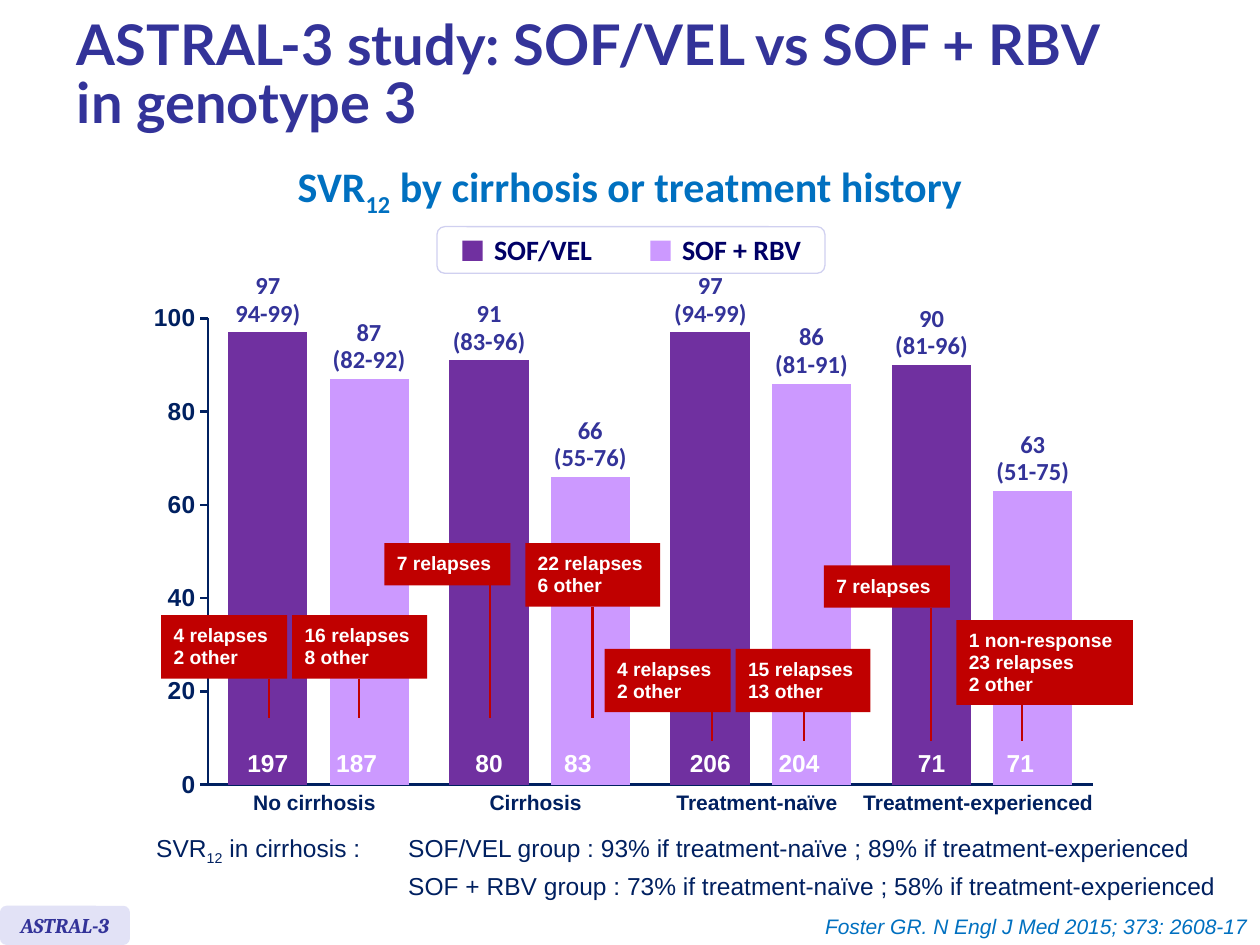
from lxml.etree import SubElement
from pptx import Presentation
from pptx.chart.data import CategoryChartData
from pptx.dml.color import RGBColor
from pptx.enum.chart import XL_CHART_TYPE as ChartType, XL_TICK_LABEL_POSITION as TickLabels
from pptx.enum.chart import XL_TICK_MARK as TickMark
from pptx.enum.shapes import MSO_CONNECTOR as Connector, MSO_SHAPE as Preset
from pptx.enum.text import MSO_ANCHOR as Anchor, PP_ALIGN as Align
from pptx.oxml import parse_xml
from pptx.oxml.ns import nsdecls, qn
from pptx.util import Cm, Pt

INDIGO = RGBColor(0x33, 0x33, 0x99)
BLUE = RGBColor(0x00, 0x70, 0xC0)
NAVY = RGBColor(0x00, 0x20, 0x60)
LEGEND_NAVY = RGBColor(0x00, 0x00, 0x66)
PURPLE = RGBColor(0x70, 0x30, 0xA0)
LILAC = RGBColor(0xCC, 0x99, 0xFF)
RED = RGBColor(0xC0, 0x00, 0x00)
WHITE = RGBColor(0xFF, 0xFF, 0xFF)
TAG_FILL = RGBColor(0xE2, 0xE2, 0xF6)
LEGEND_LINE = RGBColor(0xD0, 0xD0, 0xF0)

TITLE = dict(name="Lato", size=Pt(32), bold=True, color=INDIGO)
SUBTITLE = dict(name="Calibri", size=Pt(24), bold=True, color=BLUE)
LEGEND = dict(name="Calibri", size=Pt(16), bold=True, color=LEGEND_NAVY)
RATE = dict(name="Calibri", size=Pt(14), bold=True, color=INDIGO)
COUNT = dict(name="Arial", size=Pt(14), bold=True, color=WHITE)
AXIS = dict(name="Arial", size=Pt(14), bold=True, color=NAVY)
CATEGORY = dict(name="Arial", size=Pt(12), bold=True, color=NAVY)
CALLOUT = dict(name="Arial", size=Pt(11), bold=True, color=WHITE)
BODY = dict(name="Arial", size=Pt(14), color=NAVY)
TAG = dict(name="Cambria", size=Pt(12), bold=True, italic=True, color=INDIGO)
CITATION = dict(name="Arial", size=Pt(12), italic=True, color=BLUE)

# Plot area in centimetres
PLOT_LEFT, PLOT_TOP, PITCH, PLOT_HEIGHT = 4.19, 6.42, 4.46, 9.4
PLOT_BOTTOM = PLOT_TOP + PLOT_HEIGHT
BAR_OFFSET = 1.02

CATEGORIES = ["No cirrhosis", "Cirrhosis", "Treatment-naïve", "Treatment-experienced"]
# Per series: name, colour, shift of the patient count, (rate, interval, patients)
SERIES = [
    ("SOF/VEL", PURPLE, 0, [(97, "94-99)", 197), (91, "(83-96)", 80),
                            (97, "(94-99)", 206), (90, "(81-96)", 71)]),
    ("SOF + RBV", LILAC, -0.25, [(87, "(82-92)", 187), (66, "(55-76)", 83),
                                 (86, "(81-91)", 204), (63, "(51-75)", 71)]),
]
# Left, top, width, stem x, stem end, lines
CALLOUTS = [
    (3.25, 12.4, 2.54, 5.42, 14.48, ["4 relapses", "2 other"]),
    (5.89, 12.4, 2.72, 7.24, 14.48, ["16 relapses", "8 other"]),
    (7.75, 10.95, 2.54, 9.88, 14.48, ["7 relapses"]),
    (10.59, 10.95, 2.72, 11.95, 14.48, ["22 relapses", "6 other"]),
    (12.19, 13.08, 2.54, 14.35, 14.94, ["4 relapses", "2 other"]),
    (14.83, 13.08, 2.72, 16.21, 14.94, ["15 relapses", "13 other"]),
    (16.61, 11.4, 2.54, 18.77, 14.94, ["7 relapses"]),
    (19.28, 12.5, 3.56, 20.6, 14.94, ["1 non-response", "23 relapses", "2 other"]),
]


def format_font(font, style):
    for key, value in style.items():
        if key == "color":
            font.color.rgb = value
        else:
            setattr(font, key, value)


def write(shape, lines, style, align=Align.LEFT, anchor=Anchor.TOP, spacing=None, margin=None):
    """Fill a shape; a line is a string or a list of (text, baseline) runs."""
    frame = shape.text_frame
    frame.word_wrap = False
    frame.vertical_anchor = anchor
    if margin is not None:
        for side in ("left", "top", "right", "bottom"):
            setattr(frame, f"margin_{side}", Cm(margin))
    for index, line in enumerate(lines):
        paragraph = frame.add_paragraph() if index else frame.paragraphs[0]
        paragraph.alignment = align
        if spacing:
            paragraph.line_spacing = spacing
        for text, baseline in [(line, 0)] if isinstance(line, str) else line:
            run = paragraph.add_run()
            run.text = text
            format_font(run.font, style)
            if baseline:
                run.font._element.set("baseline", str(baseline))
    return frame


def add_text(slide, left, top, width, height, lines, style, **layout):
    box = slide.shapes.add_textbox(Cm(left), Cm(top), Cm(width), Cm(height))
    return write(box, lines, style, **layout)


def add_box(slide, left, top, width, height, fill, line=None, preset=Preset.RECTANGLE):
    shape = slide.shapes.add_shape(preset, Cm(left), Cm(top), Cm(width), Cm(height))
    shape.shadow.inherit = False
    shape.fill.solid()
    shape.fill.fore_color.rgb = fill
    if line is None:
        shape.line.fill.background()
    else:
        shape.line.color.rgb = line
        shape.line.width = Pt(0.75)
    return shape


def add_callout(slide, left, top, width, stem_x, stem_end, lines):
    height = 0.42 + 0.43 * len(lines)
    stem = slide.shapes.add_connector(
        Connector.STRAIGHT, Cm(stem_x), Cm(top + height), Cm(stem_x), Cm(stem_end))
    stem.line.color.rgb = RED
    stem.line.width = Pt(1.5)
    SubElement(stem._element.spPr, qn("a:effectLst"))
    box = add_box(slide, left, top, width, height, RED)
    write(box, lines, CALLOUT, anchor=Anchor.MIDDLE, spacing=0.95, margin=0.25)


def place_plot(chart, left, top, width, height):
    """Fix the inner plot area, given as fractions of the chart frame."""
    places = "".join(f'<c:{key} val="{value:.4f}"/>' for key, value in
                     zip("xywh", (left, top, width, height)))
    layout = parse_xml(
        f'<c:layout {nsdecls("c")}><c:manualLayout><c:layoutTarget val="inner"/>'
        f'<c:xMode val="edge"/><c:yMode val="edge"/>{places}</c:manualLayout></c:layout>')
    plot_area = chart._chartSpace.chart.plotArea
    for old in plot_area.findall(qn("c:layout")):
        plot_area.remove(old)
    plot_area.insert(0, layout)


def add_rate_chart(slide):
    data = CategoryChartData()
    data.categories = CATEGORIES
    for name, _, _, results in SERIES:
        data.add_series(name, [rate for rate, _, _ in results])
    left, top, width, height = 2.6, 5.8, 19.8, 10.6
    chart = slide.shapes.add_chart(ChartType.COLUMN_CLUSTERED, Cm(left), Cm(top),
                                   Cm(width), Cm(height), data).chart
    chart.has_legend = chart.has_title = False
    format_font(chart.font, AXIS)
    place_plot(chart, (PLOT_LEFT - left) / width, (PLOT_TOP - top) / height,
               PITCH * len(CATEGORIES) / width, PLOT_HEIGHT / height)
    plot = chart.plots[0]
    plot.vary_by_categories = False
    plot.gap_width, plot.overlap = 51, -28
    for series, (_, color, _, _) in zip(plot.series, SERIES):
        series.format.fill.solid()
        series.format.fill.fore_color.rgb = color
    rates, groups = chart.value_axis, chart.category_axis
    rates.minimum_scale, rates.maximum_scale, rates.major_unit = 0, 100, 20
    rates.major_tick_mark = TickMark.OUTSIDE
    groups.major_tick_mark = TickMark.NONE
    groups.tick_label_position = TickLabels.NONE
    for axis in (rates, groups):
        axis.has_major_gridlines = False
        axis.format.line.color.rgb = NAVY
        axis.format.line.width = Pt(1.5)


def add_bar_labels(slide):
    for side, (_, _, shift, results) in zip((-1, 1), SERIES):
        for group, (rate, interval, patients) in enumerate(results):
            center = PLOT_LEFT + PITCH * (group + 0.5) + side * BAR_OFFSET
            bar_top = PLOT_BOTTOM - PLOT_HEIGHT * rate / 100
            add_text(slide, center - 0.75, bar_top - 1.22, 1.5, 1.14, [str(rate), interval],
                     RATE, align=Align.CENTER, spacing=Pt(15.8), margin=0)
            add_text(slide, center + shift - 0.86, 15.01, 1.72, 0.81, [str(patients)],
                     COUNT, align=Align.CENTER, anchor=Anchor.MIDDLE, spacing=0.9)
    for group, name in enumerate(CATEGORIES):
        add_text(slide, PLOT_LEFT + PITCH * group - 0.45, 15.8, 5.2, 0.76, [name],
                 CATEGORY, align=Align.CENTER)


def add_legend(slide):
    add_box(slide, 8.81, 4.57, 7.82, 0.94, WHITE, LEGEND_LINE, Preset.ROUNDED_RECTANGLE)
    for left, (name, color, _, _) in zip((9.32, 13.11), SERIES):
        add_box(slide, left, 4.85, 0.41, 0.41, color)
        add_text(slide, left + 0.39, 4.57, 2.9, 0.94, [name], LEGEND)


def add_summary(slide):
    first = [("SVR", 0), ("12", -25000), (" in cirrhosis :\tSOF/VEL group : 93% if "
                                         "treatment-naïve ; 89% if treatment-experienced", 0)]
    second = "\tSOF + RBV group : 73% if treatment-naïve ; 58% if treatment-experienced"
    frame = add_text(slide, 2.9, 16.66, 21.9, 1.45, [first, second], BODY)
    for paragraph in frame.paragraphs:
        stops = SubElement(paragraph._p.get_or_add_pPr(), qn("a:tabLst"))
        SubElement(stops, qn("a:tab"), pos=str(Cm(5.08)), algn="l")
    frame.paragraphs[1].space_before = Pt(3)


def main():
    presentation = Presentation()
    presentation.slide_width, presentation.slide_height = Cm(25.4), Cm(19.05)
    slide = presentation.slides.add_slide(presentation.slide_layouts[6])

    add_text(slide, 1.3, 0.2, 23.19, 2.72, ["ASTRAL-3 study: SOF/VEL vs SOF + RBV",
             "in genotype 3"], TITLE, anchor=Anchor.MIDDLE, spacing=0.85)
    add_text(slide, 5.64, 3.12, 14.12, 1.27, [[("SVR", 0), ("12", -25000),
             (" by cirrhosis or treatment history", 0)]], SUBTITLE, align=Align.CENTER)
    add_rate_chart(slide)
    add_bar_labels(slide)
    add_legend(slide)
    for callout in CALLOUTS:
        add_callout(slide, *callout)
    add_summary(slide)
    tag = add_box(slide, 0, 18.26, 2.62, 0.79, TAG_FILL, preset=Preset.ROUNDED_RECTANGLE)
    write(tag, ["ASTRAL-3"], TAG, align=Align.CENTER, anchor=Anchor.MIDDLE)
    add_text(slide, 16.31, 18.29, 9.09, 0.76, ["Foster GR. N Engl J Med 2015; 373: 2608-17"],
             CITATION, align=Align.RIGHT)
    presentation.save("out.pptx")


if __name__ == "__main__":
    main()
